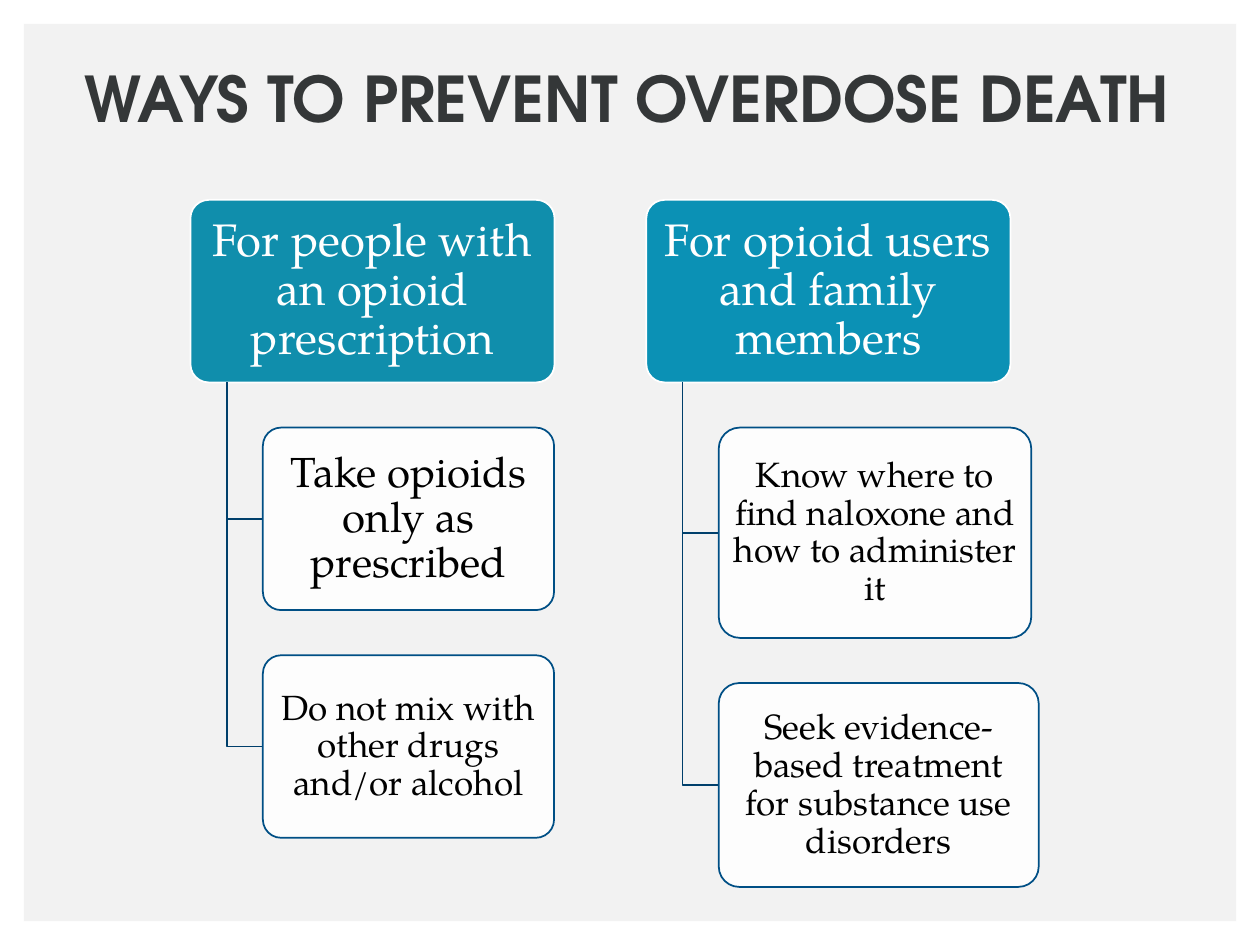
from dataclasses import dataclass

from lxml.etree import SubElement
from pptx import Presentation
from pptx.dml.color import RGBColor
from pptx.enum.shapes import MSO_SHAPE as Preset
from pptx.enum.text import MSO_ANCHOR as Anchor, MSO_AUTO_SIZE as AutoSize, PP_ALIGN as Align
from pptx.oxml.ns import qn
from pptx.shapes.autoshape import Shape
from pptx.slide import Slide
from pptx.text.text import TextFrame
from pptx.util import Cm, Pt


@dataclass(frozen=True)
class Theme:
    title_font: str = "TeX Gyre Adventor"
    body_font: str = "TeX Gyre Pagella"
    title_color: str = "343738"
    panel: str = "F2F2F2"
    white: str = "FFFFFF"
    black: str = "000000"
    box_line: str = "004F85"
    branch_line: str = "003F6B"
    title_size: int = 36
    header_size: int = 26
    large_size: int = 24
    small_size: int = 20


THEME = Theme()


@dataclass(frozen=True)
class Advice:
    text: str
    width: float
    height: float
    size: int = THEME.small_size


@dataclass(frozen=True)
class Audience:
    text: str
    left: float
    color: str
    advice: tuple[Advice, ...]


# Lengths in centimetres
SLIDE_WIDTH, SLIDE_HEIGHT, PANEL_MARGIN = 25.4, 19.05, 0.48
HEADER_TOP, HEADER_WIDTH, HEADER_HEIGHT = 4.03, 7.34, 3.68
BOX_GAP, BRANCH_INDENT = 0.91, 0.73

AUDIENCES = (
    Audience("For people with an opioid prescription", 3.84, "108EAC", (
        Advice("Take opioids only as prescribed", 5.87, HEADER_HEIGHT, THEME.large_size),
        Advice("Do not mix with other drugs and/or alcohol", 5.87, HEADER_HEIGHT),
    )),
    Audience("For opioid users and family members", 13.03, "0B91B5", (
        Advice("Know where to find naloxone and how to administer it", 6.3, 4.24),
        Advice("Seek evidence-based treatment for substance use disorders", 6.45, 4.11),
    )),
)


def rgb(color: str) -> RGBColor:
    return RGBColor.from_string(color)


def write(text_frame: TextFrame, text: str, font: str, size: int, color: str,
          bold: bool = False) -> None:
    text_frame.text = text
    style = text_frame.paragraphs[0].runs[0].font
    style.name, style.size, style.bold = font, Pt(size), bold
    style.color.rgb = rgb(color)


def set_line(shape: Shape, color: str) -> None:
    shape.line.color.rgb = rgb(color)
    shape.line.width = Pt(1)


def add_panel(slide: Slide) -> None:
    shape = slide.shapes.add_shape(
        Preset.RECTANGLE, Cm(PANEL_MARGIN), Cm(PANEL_MARGIN),
        Cm(SLIDE_WIDTH - 2 * PANEL_MARGIN), Cm(SLIDE_HEIGHT - 2 * PANEL_MARGIN))
    shape.shadow.inherit = False
    shape.fill.solid()
    shape.fill.fore_color.rgb = rgb(THEME.panel)
    shape.line.fill.background()


def add_title(slide: Slide, text: str) -> None:
    text_frame = slide.shapes.add_textbox(Cm(1.45), Cm(1.07), Cm(23.32), Cm(1.8)).text_frame
    text_frame.word_wrap = False
    text_frame.auto_size = AutoSize.SHAPE_TO_FIT_TEXT
    write(text_frame, text, THEME.title_font, THEME.title_size, THEME.title_color, bold=True)


def add_box(slide: Slide, left: float, top: float, width: float, height: float,
            text: str, size: int, fill: str, line: str, color: str) -> Shape:
    shape = slide.shapes.add_shape(
        Preset.ROUNDED_RECTANGLE, Cm(left), Cm(top), Cm(width), Cm(height))
    shape.adjustments[0] = 0.1
    shape.shadow.inherit = False
    shape.fill.solid()
    shape.fill.fore_color.rgb = rgb(fill)
    set_line(shape, line)
    text_frame = shape.text_frame
    text_frame.word_wrap = True
    text_frame.vertical_anchor = Anchor.MIDDLE
    text_frame.margin_left = text_frame.margin_right = Cm(0.11)
    text_frame.margin_top = text_frame.margin_bottom = Cm(0.08)
    write(text_frame, text, THEME.body_font, size, color)
    paragraph = text_frame.paragraphs[0]
    paragraph.alignment = Align.CENTER
    paragraph.line_spacing = 0.9
    return shape


def set_opacity(shape: Shape, percent: int) -> None:
    color = shape.fill._xPr.find(qn("a:solidFill"))[0]
    SubElement(color, qn("a:alpha")).set("val", str(percent * 1000))


def add_branch(slide: Slide, left: float, top: float, bottom: float) -> None:
    """Draw an L-shaped line down from a header and right to an advice box."""
    right = left + BRANCH_INDENT
    builder = slide.shapes.build_freeform(Cm(left), Cm(top))
    builder.add_line_segments([(Cm(left), Cm(bottom)), (Cm(right), Cm(bottom))], close=False)
    shape = builder.convert_to_shape()
    shape.shadow.inherit = False
    shape.fill.background()
    set_line(shape, THEME.branch_line)


def add_audience(slide: Slide, audience: Audience) -> None:
    add_box(slide, audience.left, HEADER_TOP, HEADER_WIDTH, HEADER_HEIGHT, audience.text,
            THEME.header_size, audience.color, THEME.white, THEME.white)
    header_bottom = HEADER_TOP + HEADER_HEIGHT
    trunk = audience.left + BRANCH_INDENT
    top = header_bottom + BOX_GAP
    for advice in audience.advice:
        add_branch(slide, trunk, header_bottom, top + advice.height / 2)
        box = add_box(slide, trunk + BRANCH_INDENT, top, advice.width, advice.height,
                      advice.text, advice.size, THEME.white, THEME.box_line, THEME.black)
        set_opacity(box, 90)
        top += advice.height + BOX_GAP


def main() -> None:
    presentation = Presentation()
    presentation.slide_width, presentation.slide_height = Cm(SLIDE_WIDTH), Cm(SLIDE_HEIGHT)
    slide = presentation.slides.add_slide(presentation.slide_layouts[6])
    add_panel(slide)
    add_title(slide, "WAYS TO PREVENT OVERDOSE DEATH")
    for audience in AUDIENCES:
        add_audience(slide, audience)
    presentation.save("out.pptx")


if __name__ == "__main__":
    main()
